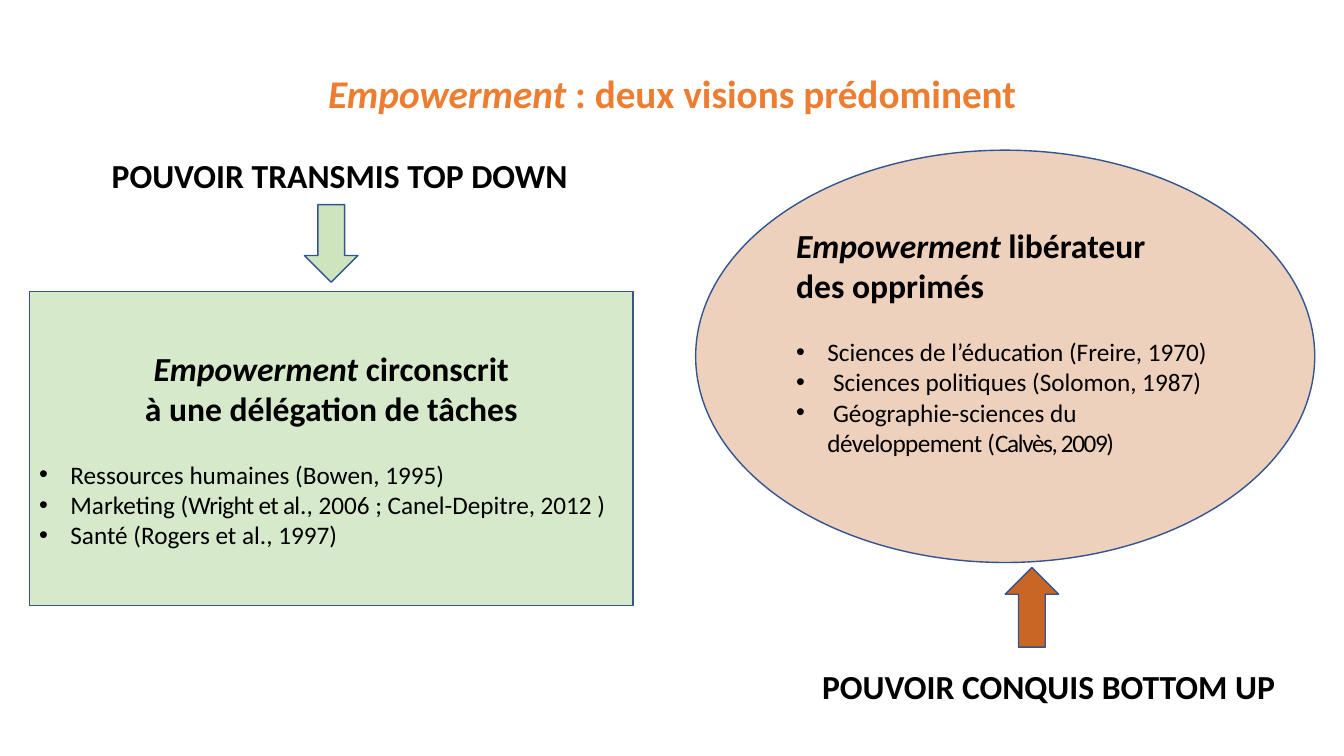
import pptx
import pptx.dml.color
import pptx.enum.shapes
import pptx.enum.text
import pptx.oxml.ns
import pptx.util
from lxml import etree

PX = 9144  # EMU per px, 100 px to the inch
FONT = "Calibri"
BLACK = pptx.dml.color.RGBColor(0x00, 0x00, 0x00)
TITLE_ORANGE = pptx.dml.color.RGBColor(0xED, 0x7D, 0x31)
RUST = pptx.dml.color.RGBColor(0xC5, 0x5A, 0x11)
GREEN = pptx.dml.color.RGBColor(0xA9, 0xD1, 0x8E)
OUTLINE = pptx.dml.color.RGBColor(0x32, 0x54, 0x91)

SHAPES = pptx.enum.shapes.MSO_SHAPE
ALIGN = pptx.enum.text.PP_ALIGN
ANCHOR = pptx.enum.text.MSO_ANCHOR
BULLET_INDENT = 31
BULLET_GAP = 22  # points between a heading and its list


def px(*lengths):
    return [pptx.util.Emu(length * PX) for length in lengths]


def add_run(paragraph, text, size, bold=True, italic=False, color=BLACK, spacing=0):
    """Spacing is the character spacing in hundredths of a point."""
    run = paragraph.add_run()
    run.text = text
    run.font.name = FONT
    run.font.size = pptx.util.Pt(size)
    run.font.bold = bold
    run.font.italic = italic
    run.font.color.rgb = color
    if spacing:
        run._r.get_or_add_rPr().set("spc", str(spacing))


def make_bullet(paragraph):
    properties = paragraph._p.get_or_add_pPr()
    properties.set("marL", str(BULLET_INDENT * PX))
    properties.set("indent", str(-BULLET_INDENT * PX))
    font = etree.SubElement(properties, pptx.oxml.ns.qn("a:buFont"))
    font.set("typeface", "Arial")
    mark = etree.SubElement(properties, pptx.oxml.ns.qn("a:buChar"))
    mark.set("char", "•")


def add_tinted_shape(slide, kind, box, color, opacity):
    """Opacity is a percentage."""
    shape = slide.shapes.add_shape(kind, *px(*box))
    shape.shadow.inherit = False
    shape.fill.solid()
    shape.fill.fore_color.rgb = color
    tint = shape.fill._xPr.find(".//" + pptx.oxml.ns.qn("a:srgbClr"))
    alpha = etree.SubElement(tint, pptx.oxml.ns.qn("a:alpha"))
    alpha.set("val", str(opacity * 1000))
    shape.line.color.rgb = OUTLINE
    shape.line.width = pptx.util.Pt(1)
    return shape


def add_vision(slide, kind, box, color, opacity, heading, align, fields, bottom_inset):
    """Place one view of empowerment: a two-line heading above its fields."""
    frame = add_tinted_shape(slide, kind, box, color, opacity).text_frame
    frame.word_wrap = True
    frame.vertical_anchor = ANCHOR.MIDDLE
    frame.margin_bottom, = px(bottom_inset)
    first_line, second_line = heading

    opening = frame.paragraphs[0]
    opening.alignment = align
    add_run(opening, "Empowerment", 24, italic=True)
    add_run(opening, first_line, 24)
    closing = frame.add_paragraph()
    closing.alignment = align
    add_run(closing, second_line, 24)

    for index, pieces in enumerate(fields):
        field = frame.add_paragraph()
        field.alignment = ALIGN.LEFT
        if index == 0:
            field.space_before = pptx.util.Pt(BULLET_GAP)
        make_bullet(field)
        for text, spacing in pieces:
            add_run(field, text, 18, bold=False, spacing=spacing)


def add_label(slide, box, text, align):
    frame = slide.shapes.add_textbox(*px(*box)).text_frame
    frame.word_wrap = False
    frame.auto_size = pptx.enum.text.MSO_AUTO_SIZE.SHAPE_TO_FIT_TEXT
    frame.paragraphs[0].alignment = align
    add_run(frame.paragraphs[0], text, 24)


def add_title(slide, box):
    frame = slide.shapes.add_textbox(*px(*box)).text_frame
    frame.word_wrap = True
    title = frame.paragraphs[0]
    title.alignment = ALIGN.CENTER
    title.line_spacing = 0.9
    add_run(title, "Empowerment", 28, italic=True, color=TITLE_ORANGE)
    add_run(title, " : deux visions prédominent", 28, color=TITLE_ORANGE)


def add_bottom_up(slide, left, top):
    add_vision(
        slide, SHAPES.OVAL, (left, top, 614, 409), RUST, 28,
        (" libérateur", "des opprimés"), ALIGN.LEFT,
        [
            [("Sciences de l’éducation (Freire, 1970)", 0)],
            [(" Sciences politiques (Solomon, 1987)", 0)],
            [(" Géographie-sciences du ", 0), ("développement ", -40),
             ("(", 0), ("Calvès, 2009)", -100)],
        ],
        bottom_inset=35,
    )
    add_label(slide, (left + 113, top + 507, 474, 50),
              "POUVOIR CONQUIS BOTTOM UP", ALIGN.CENTER)
    add_tinted_shape(slide, SHAPES.UP_ARROW, (left + 307, top + 414, 53, 79), RUST, 92)


def add_top_down(slide, left, top):
    add_label(slide, (left + 72, top, 476, 50),
              "POUVOIR TRANSMIS TOP DOWN", ALIGN.LEFT)
    arrow = add_tinted_shape(slide, SHAPES.UP_ARROW,
                             (left + 273, top + 54, 53, 77), GREEN, 58)
    arrow.rotation = 180
    add_vision(
        slide, SHAPES.RECTANGLE, (left, top + 140, 599, 312), GREEN, 46,
        (" circonscrit", "à une délégation de tâches"), ALIGN.CENTER,
        [
            [("Ressources humaines (Bowen, 1995)", 0)],
            [("Marketing (", 0), ("Wright et al", -50),
             ("., 2006 ; Canel-Depitre, 2012 )", 0)],
            [("Santé (Rogers et al., 1997)", 0)],
        ],
        bottom_inset=5,
    )


def main():
    deck = pptx.Presentation()
    deck.slide_width, deck.slide_height = px(1333, 750)
    slide = deck.slides.add_slide(deck.slide_layouts[6])
    add_bottom_up(slide, 690, 149)
    add_top_down(slide, 29, 149)
    add_title(slide, (1, 69, 1331, 80))
    deck.save("out.pptx")


if __name__ == "__main__":
    main()
